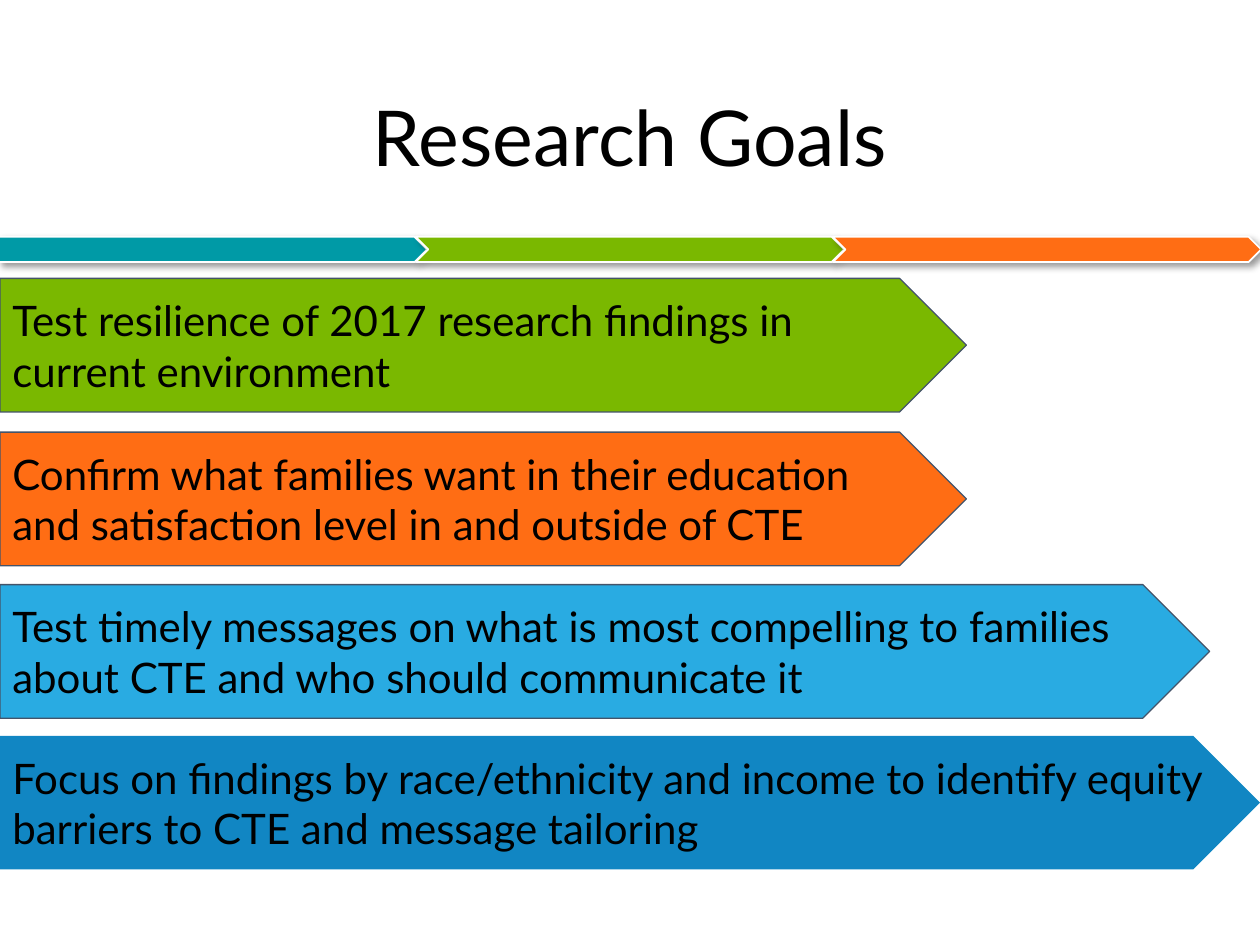
from lxml import etree
from pptx import Presentation
from pptx.dml.color import RGBColor
from pptx.enum.shapes import MSO_SHAPE
from pptx.enum.text import MSO_ANCHOR, PP_ALIGN
from pptx.oxml import parse_xml
from pptx.oxml.ns import qn
from pptx.util import Inches, Pt

PENTAGON, CHEVRON = MSO_SHAPE.PENTAGON, MSO_SHAPE.CHEVRON
MIDDLE = MSO_ANCHOR.MIDDLE
LEFT, CENTER = PP_ALIGN.LEFT, PP_ALIGN.CENTER

COLORS = {
    "teal": "009AA6", "green": "7AB800", "orange": "FF6D14",
    "sky": "29ABE2", "blue": "1186C3", "slate": "44546A",
    "white": "FFFFFF", "black": "000000",
}
SHADOW = (
    '<a:outerShdw xmlns:a="http://schemas.openxmlformats.org/drawingml/2006/main"'
    ' blurRad="50800" dist="38100" dir="2700000" algn="tl" rotWithShape="0">'
    '<a:srgbClr val="000000"><a:alpha val="40000"/></a:srgbClr></a:outerShdw>'
)


def color(name):
    return RGBColor.from_string(COLORS[name])


def write(shape, text, size=24, align=LEFT, spacing=None, inset=0.1):
    frame = shape.text_frame
    frame.word_wrap = True
    frame.vertical_anchor = MIDDLE
    frame.margin_left = frame.margin_right = Inches(0.1)
    frame.margin_top = frame.margin_bottom = Inches(inset)
    frame.text = text
    for paragraph in frame.paragraphs:
        paragraph.alignment = align
        paragraph.line_spacing = spacing
        for run in paragraph.runs:
            run.font.name = "Lato"
            run.font.size = Pt(size)
            run.font.color.rgb = color("black")


def add_arrow(kind, left, top, width, height, fill, line=None, line_width=0.75):
    arrow = slide.shapes.add_shape(
        kind, Inches(left), Inches(top), Inches(width), Inches(height))
    arrow.adjustments[0] = 0.5
    arrow.fill.solid()
    arrow.fill.fore_color.rgb = color(fill)
    if line:
        arrow.line.color.rgb = color(line)
        arrow.line.width = Pt(line_width)
    else:
        arrow.line.fill.background()
    arrow.shadow.inherit = False
    return arrow


prs = Presentation()
prs.slide_width, prs.slide_height = Inches(10), Inches(7.5)
slide = prs.slides.add_slide(prs.slide_layouts[5])

# Title
title = slide.shapes.title
title.left, title.top = Inches(0.69), Inches(0.4)
title.width, title.height = Inches(8.62), Inches(1.45)
write(title, "Research Goals", size=44, align=CENTER, spacing=0.9, inset=0.05)

# Divider band of three segments
segments = [(PENTAGON, "teal"), (CHEVRON, "green"), (CHEVRON, "orange")]
for i, (kind, fill) in enumerate(segments):
    segment = add_arrow(kind, -0.01 + 3.31 * i, 1.88, 3.4, 0.2, fill, "white", 1)
    effects = segment._element.spPr.find(qn("a:effectLst"))
    etree.SubElement(effects, qn("a:outerShdw"))
    effects.replace(effects[0], parse_xml(SHADOW))

# Goals, from top to bottom
goals = [
    (2.21, 7.67, "green", "slate",
     "Test resilience of 2017 research findings in current environment"),
    (3.43, 7.67, "orange", "slate",
     "Confirm what families want in their education\n"
     "and satisfaction level in and outside of CTE"),
    (4.64, 9.6, "sky", "slate",
     "Test timely messages on what is most compelling to families "
     "about CTE and who should communicate it"),
    (5.84, 10, "blue", None,
     "Focus on findings by race/ethnicity and income to identify equity "
     "barriers to CTE and message tailoring"),
]
for top, width, fill, line, text in goals:
    write(add_arrow(PENTAGON, 0, top, width, 1.06, fill, line), text)

prs.save("out.pptx")
